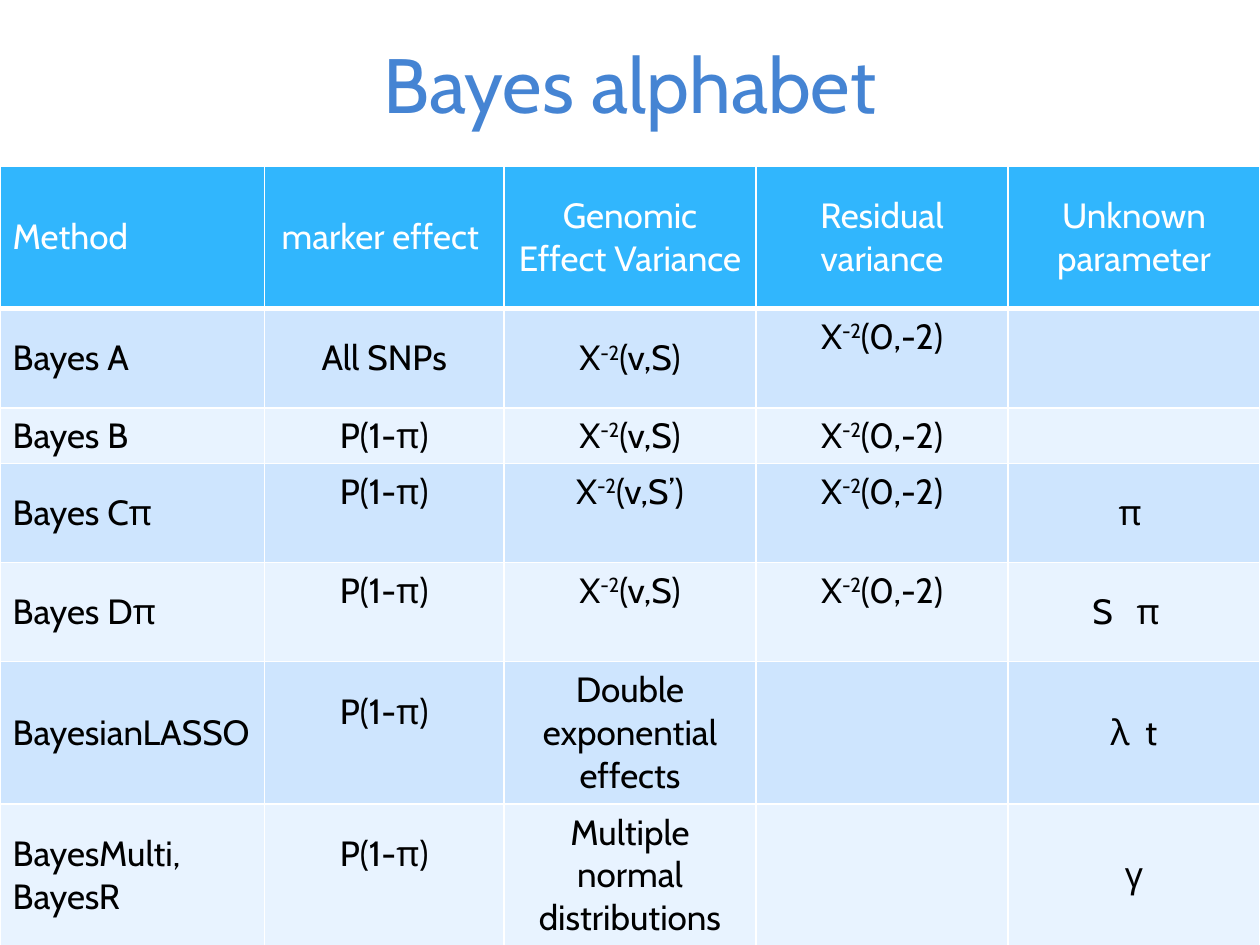
"""Build the Bayes alphabet slide with its table of methods."""
from lxml import etree
from pptx import Presentation
from pptx import util as u
from pptx.dml.color import RGBColor
from pptx.enum import text
from pptx.oxml.ns import qn

WHITE = "FFFFFF"
HEADER = "31B6FD"
BANDS = ["E8F3FF", "CEE5FE"]


def color(value):
    return RGBColor.from_string(value)


def write(frame, content, size=20, ink="000000", align=text.PP_ALIGN.CENTER):
    paragraph = frame.paragraphs[0]
    paragraph.alignment = align
    for index, part in enumerate(content.split("|")):
        run = paragraph.add_run()
        run.text = part
        run.font.name = "Cabin"
        run.font.size = u.Pt(size)
        run.font.bold = False
        run.font.color.rgb = color(ink)
        if index % 2:
            run.font._element.set("baseline", "30000")


presentation = Presentation()
presentation.slide_width = u.Cm(25.4)
presentation.slide_height = u.Cm(19.05)
slide = presentation.slides.add_slide(presentation.slide_layouts[5])

title = slide.shapes.title
title.left, title.top, title.width, title.height = u.Cm(1.27), u.Cm(0), u.Cm(22.86), u.Cm(3.35)
title.text_frame.vertical_anchor = text.MSO_ANCHOR.MIDDLE
write(title.text_frame, "Bayes alphabet", size=44, ink="4584D3")

share = "P(1-π)"
variance = "X|-2|(v,S)"
residual = "X|-2|(0,-2)"
rows = [
    ["Method", "marker effect ", "Genomic Effect Variance ", "Residual variance", "Unknown parameter"],
    ["Bayes A", "All SNPs", variance, residual, ""],
    ["Bayes B", share, variance, residual, ""],
    ["Bayes Cπ", share, "X|-2|(v,S’)", residual, "π "],
    ["Bayes Dπ", share, variance, residual, "S   π  "],
    ["BayesianLASSO", share, "Double exponential effects", "", "λ  t"],
    ["BayesMulti, BayesR", share, "Multiple normal distributions", "", "γ"],
]
widths = [5.33, 4.83, 5.08, 5.08, 5.08]
heights = [2.87, 2, 1.12, 2, 2, 2.87, 2.87]
raised = {(1, 3), (5, 1), (6, 1)} | {(row, column) for row in (3, 4) for column in (1, 2, 3)}

table = slide.shapes.add_table(
    len(rows), len(widths), u.Cm(0), u.Cm(3.35), u.Cm(sum(widths)), u.Cm(sum(heights))
).table
for column, width in zip(table.columns, widths):
    column.width = u.Cm(width)

for row_index, (row, height) in enumerate(zip(rows, heights)):
    table.rows[row_index].height = u.Cm(height)
    is_header = row_index == 0
    for column_index, content in enumerate(row):
        cell = table.cell(row_index, column_index)
        cell.vertical_anchor = text.MSO_ANCHOR.MIDDLE
        if (row_index, column_index) in raised:
            cell.margin_bottom = u.Cm(0.99)
        if content:
            write(
                cell.text_frame,
                content,
                ink=WHITE if is_header else "000000",
                align=text.PP_ALIGN.CENTER if column_index else text.PP_ALIGN.LEFT,
            )
        properties = cell._tc.get_or_add_tcPr()
        for side in ("lnL", "lnR", "lnT", "lnB"):
            points = 3 if is_header and side == "lnB" else 1
            line = etree.SubElement(properties, qn(f"a:{side}"), w=str(u.Pt(points)))
            fill = etree.SubElement(line, qn("a:solidFill"))
            etree.SubElement(fill, qn("a:srgbClr"), val=WHITE)
        cell.fill.solid()
        cell.fill.fore_color.rgb = color(HEADER if is_header else BANDS[row_index % 2])

presentation.save("out.pptx")
